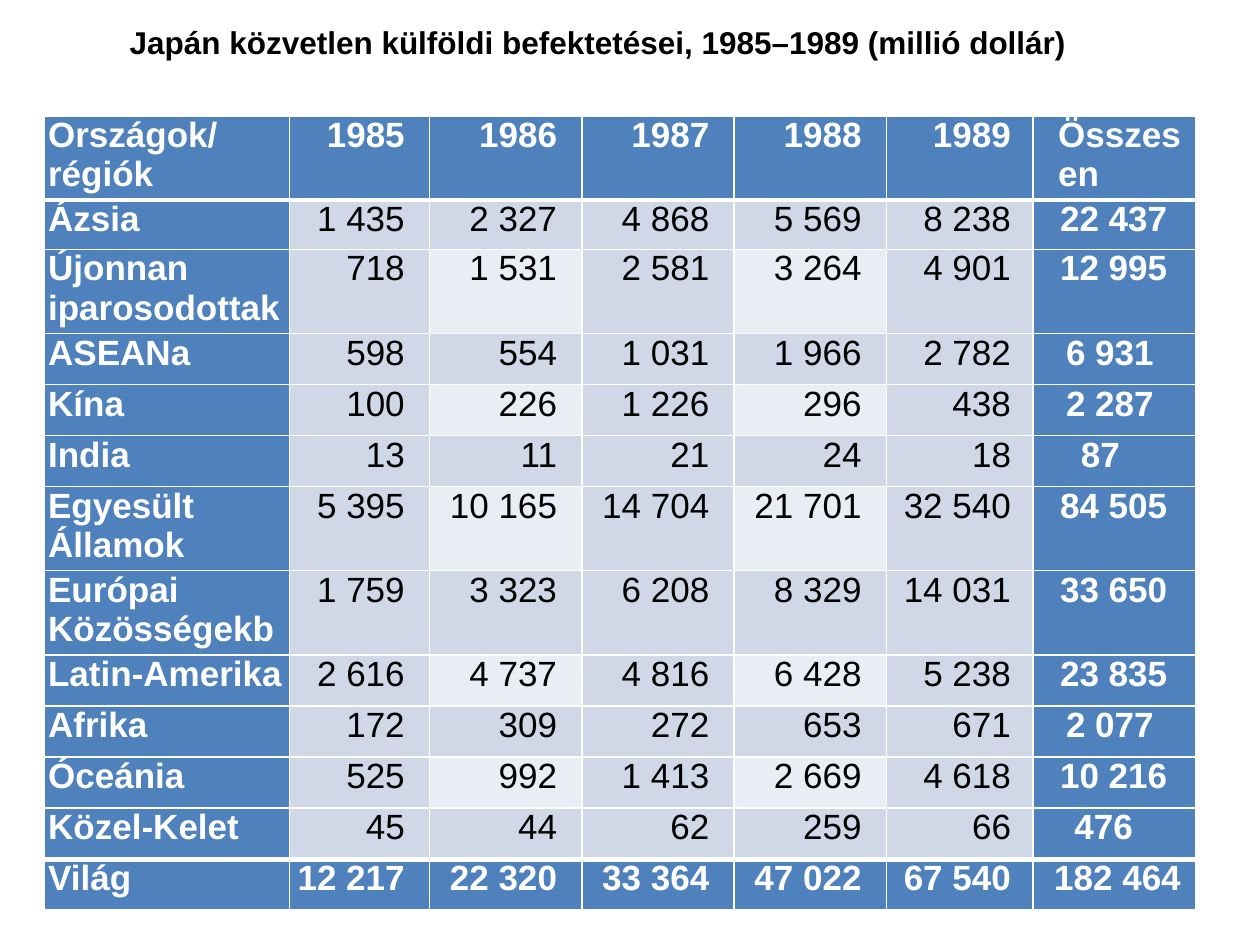
from lxml.etree import SubElement
from pptx import Presentation
from pptx.dml.color import RGBColor
from pptx.enum.text import MSO_ANCHOR, MSO_AUTO_SIZE, PP_ALIGN
from pptx.oxml.ns import qn
from pptx.util import Cm, Pt

HUES = {"head": "4F81BD", "band": "D0D8E8", "pale": "E9EDF4",
        "white": "FFFFFF", "black": "000000"}
TITLE = "Japán közvetlen külföldi befektetései, 1985–1989 (millió dollár)"
ROWS = [
    ("Országok/régiók", "1985", "1986", "1987", "1988", "1989", "Összesen"),
    ("Ázsia", "1 435", "2 327", "4 868", "5 569", "8 238", "22 437"),
    ("Újonnan iparosodottak", "718", "1 531", "2 581", "3 264", "4 901", "12 995"),
    ("ASEANa", "598", "554", "1 031", "1 966", "2 782", "6 931"),
    ("Kína", "100", "226", "1 226", "296", "438", "2 287"),
    ("India", "13", "11", "21", "24", "18", "87"),
    ("Egyesült Államok", "5 395", "10 165", "14 704", "21 701", "32 540", "84 505"),
    ("Európai Közösségekb", "1 759", "3 323", "6 208", "8 329", "14 031", "33 650"),
    ("Latin-Amerika", "2 616", "4 737", "4 816", "6 428", "5 238", "23 835"),
    ("Afrika", "172", "309", "272", "653", "671", "2 077"),
    ("Óceánia", "525", "992", "1 413", "2 669", "4 618", "10 216"),
    ("Közel-Kelet", "45", "44", "62", "259", "66", "476"),
    ("Világ", "12 217", "22 320", "33 364", "47 022", "67 540", "182 464"),
]
LAST_ROW, LAST_COL = len(ROWS) - 1, len(ROWS[0]) - 1
WIDTHS = [4.95, 2.82, 3.07, 3.07, 3.07, 2.95, 3.28]
HEIGHTS = [1.02, 0.99, 1.57, 1.03, 1.03, 1.03, 1.57,
           1.57, 1.03, 1.03, 1.03, 1.03, 1.02]
# Left indent of the totals, by the length of the text
INDENTS = {8: 0.51, 7: 0.43, 6: 0.55, 5: 0.67, 3: 0.84, 2: 0.97}


def write(frame, text, size=20, hue="white", bold=True, align=PP_ALIGN.LEFT,
          left=0, right=0, before=0):
    frame.word_wrap = True
    para = frame.paragraphs[0]
    para.alignment = align
    para.space_before = Pt(before)
    props = para._p.get_or_add_pPr()
    for key, gap in (("marL", left), ("marR", right), ("indent", 0)):
        props.set(key, str(Cm(gap)))
    run = para.add_run()
    run.text = text
    font = run.font
    font.name, font.size, font.bold = "Arial", Pt(size), bold
    font.color.rgb = RGBColor.from_string(HUES[hue])


def edge(cell, top, bottom):
    """Draw white borders; top and bottom are widths in points."""
    props = cell._tc.get_or_add_tcPr()
    for tag, width in (("lnL", 1), ("lnR", 1), ("lnT", top), ("lnB", bottom)):
        line = SubElement(props, qn("a:" + tag), w=str(Pt(width)))
        fill = SubElement(line, qn("a:solidFill"))
        SubElement(fill, qn("a:srgbClr"), val=HUES["white"])


def fill_cell(cell, row, col, text):
    cell.margin_left = cell.margin_right = 0
    cell.margin_top = cell.margin_bottom = 0
    edge(cell, 3 if row in (1, LAST_ROW) else 1,
         3 if row in (0, LAST_ROW - 1) else 1)
    strong = row in (0, LAST_ROW) or col in (0, LAST_COL)
    pale = row % 2 == 0 and col % 2 == 0
    shade = "head" if strong else "pale" if pale else "band"
    cell.fill.solid()
    cell.fill.fore_color.rgb = RGBColor.from_string(HUES[shade])
    if col == 0:
        place = {"left": 0.08}
    elif col == LAST_COL:
        place = {"left": INDENTS[len(text)]}
    else:
        place = {"align": PP_ALIGN.RIGHT,
                 "right": 0.44 if col == LAST_COL - 1 else 0.5}
    write(cell.text_frame, text, hue="white" if strong else "black",
          bold=strong, before=1 if row in (0, 1, LAST_ROW) else 1.8, **place)


def add_grid(slide, x, y):
    table = slide.shapes.add_table(
        len(ROWS), len(WIDTHS), Cm(x), Cm(y),
        Cm(sum(WIDTHS)), Cm(sum(HEIGHTS))).table
    table.horz_banding = False
    table.first_col = table.last_col = table.last_row = True
    for col, width in zip(table.columns, WIDTHS):
        col.width = Cm(width)
    for line, height in zip(table.rows, HEIGHTS):
        line.height = Cm(height)
    for row, texts in enumerate(ROWS):
        for col, text in enumerate(texts):
            fill_cell(table.cell(row, col), row, col, text)


def set_title(slide, x, y, w, h):
    title = slide.shapes.title
    title.left, title.top, title.width, title.height = map(Cm, (x, y, w, h))
    frame = title.text_frame
    frame.vertical_anchor = MSO_ANCHOR.TOP
    frame.auto_size = MSO_AUTO_SIZE.SHAPE_TO_FIT_TEXT
    write(frame, TITLE, size=18, hue="black", left=1.27)


def main():
    deck = Presentation()
    deck.slide_width, deck.slide_height = Cm(25.4), Cm(19.05)
    slide = deck.slides.add_slide(deck.slide_layouts[5])
    set_title(slide, 1.09, 0.33, 22.81, 1.27)
    add_grid(slide, 0.89, 2.34)
    deck.save("out.pptx")


if __name__ == "__main__":
    main()
